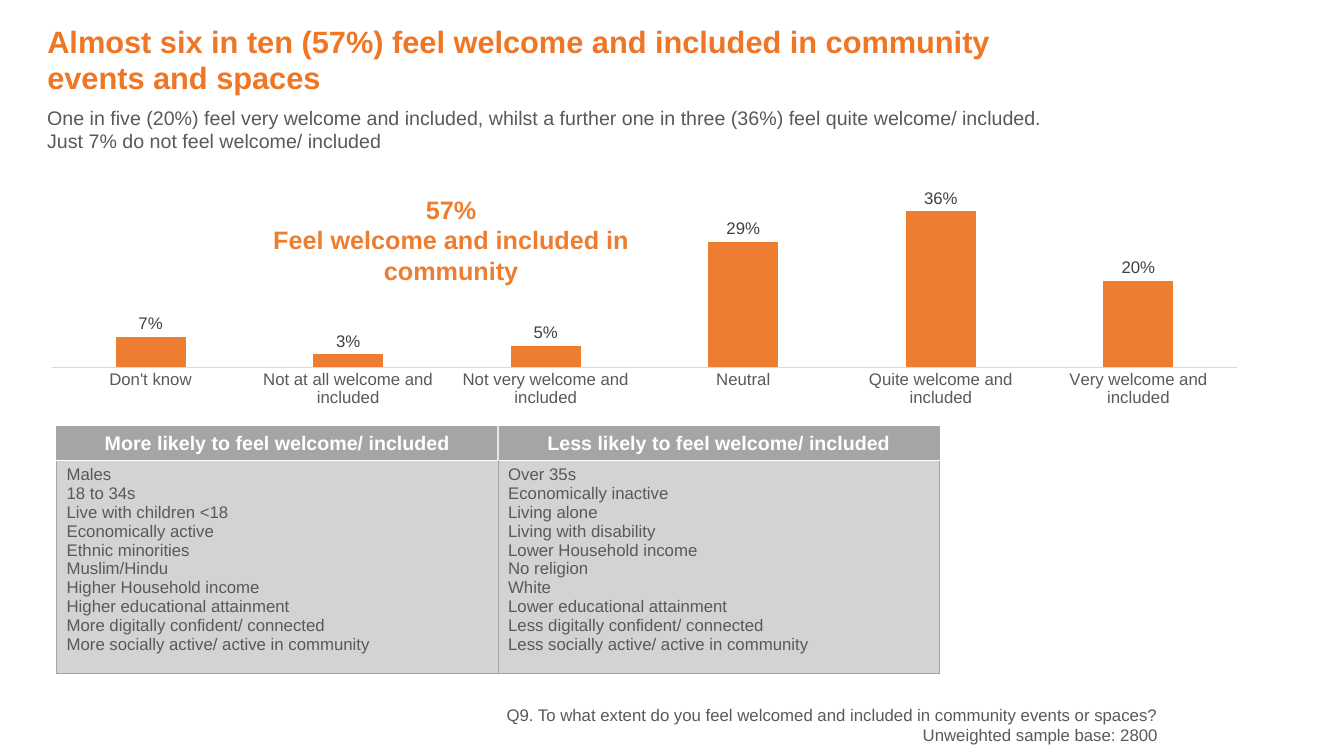
"""Build the slide on feeling welcome in community events and spaces."""
from dataclasses import dataclass

from lxml import etree
from pptx import Presentation
from pptx.chart.data import CategoryChartData
from pptx.dml.color import RGBColor
from pptx.enum.chart import XL_CHART_TYPE, XL_LABEL_POSITION, XL_TICK_MARK
from pptx.enum.text import MSO_ANCHOR, MSO_AUTO_SIZE, PP_ALIGN
from pptx.oxml.ns import qn
from pptx.util import Pt

COLUMN = XL_CHART_TYPE.COLUMN_CLUSTERED
OUTSIDE = XL_LABEL_POSITION.OUTSIDE_END
NO_TICK = XL_TICK_MARK.NONE
TOP, MIDDLE = MSO_ANCHOR.TOP, MSO_ANCHOR.MIDDLE
NO_FIT = MSO_AUTO_SIZE.NONE
LEFT, CENTER, RIGHT = PP_ALIGN.LEFT, PP_ALIGN.CENTER, PP_ALIGN.RIGHT

COLORS = {
    "title": "EE7624", "accent": "ED7D31", "body": "595959", "label": "404040",
    "axis": "D9D9D9", "header": "A5A5A5", "panel": "D3D3D3", "divider": "E7E6E6",
    "white": "FFFFFF",
}
ANSWERS = {
    "Don't know": 0.07,
    "Not at all welcome and included": 0.03,
    "Not very welcome and included": 0.05,
    "Neutral": 0.29,
    "Quite welcome and included": 0.36,
    "Very welcome and included": 0.2,
}


@dataclass(frozen=True)
class Style:
    """Hold the look of a text."""
    size: float
    color: str
    bold: bool = False
    align: PP_ALIGN = LEFT
    anchor: MSO_ANCHOR = TOP


@dataclass(frozen=True)
class Note:
    """Describe a text box in points."""
    left: float
    top: float
    width: float
    height: float
    lines: list[str]
    style: Style
    inset: bool = True


@dataclass(frozen=True)
class Group:
    """Describe one column of the table."""
    heading: str
    members: list[str]


TITLE = Style(22, "title", True)
HEADING = Style(14, "white", True, CENTER, MIDDLE)
MEMBER = Style(12, "body")
NOTES = [
    Note(120.2, 503.3, 707, 28.8, [
        "Q9. To what extent do you feel welcomed and included in community events or spaces?",
        "Unweighted sample base: 2800",
    ], Style(12, "body", False, RIGHT, MIDDLE), False),
    Note(26.6, 72, 730.8, 41, [
        "One in five (20%) feel very welcome and included, whilst a further one in three "
        "(36%) feel quite welcome/ included. Just 7% do not feel welcome/ included",
    ], Style(14, "body")),
    Note(164.2, 135.4, 316, 72.7, ["57%", "Feel welcome and included in community"],
         Style(18, "accent", True, CENTER)),
]
GROUPS = [
    Group("More likely to feel welcome/ included", [
        "Males", "18 to 34s", "Live with children <18", "Economically active",
        "Ethnic minorities", "Muslim/Hindu", "Higher Household income",
        "Higher educational attainment", "More digitally confident/ connected",
        "More socially active/ active in community",
    ]),
    Group("Less likely to feel welcome/ included", [
        "Over 35s", "Economically inactive", "Living alone", "Living with disability",
        "Lower Household income", "No religion", "White", "Lower educational attainment",
        "Less digitally confident/ connected", "Less socially active/ active in community",
    ]),
]


def rgb(name: str) -> RGBColor:
    """Return the named colour."""
    return RGBColor.from_string(COLORS[name])


def assign(target, values: dict) -> None:
    """Set each attribute of the target."""
    for name, value in values.items():
        setattr(target, name, value)


def format_font(font, style: Style) -> None:
    """Apply a style to a font."""
    assign(font, {"name": "Arial", "size": Pt(style.size), "bold": style.bold})
    font.color.rgb = rgb(style.color)


def write(frame, lines: list[str], style: Style) -> None:
    """Write one paragraph per line."""
    frame.text = "\n".join(lines)
    for paragraph in frame.paragraphs:
        paragraph.alignment = style.align
        for run in paragraph.runs:
            format_font(run.font, style)


def add_title(slide) -> None:
    """Place and fill the title."""
    title = slide.shapes.title
    assign(title, {"left": Pt(26.6), "top": Pt(15.8), "width": Pt(690), "height": Pt(60)})
    frame = title.text_frame
    write(frame, ["Almost six in ten (57%) feel welcome and included in community "
                  "events and spaces"], TITLE)
    assign(frame, {"auto_size": NO_FIT, "word_wrap": True, "vertical_anchor": TOP,
                   "margin_top": Pt(2.5)})
    frame.paragraphs[0].line_spacing = 0.96


def add_note(slide, note: Note) -> None:
    """Draw a text box."""
    frame = slide.shapes.add_textbox(
        Pt(note.left), Pt(note.top), Pt(note.width), Pt(note.height)).text_frame
    assign(frame, {"word_wrap": True, "vertical_anchor": note.style.anchor})
    if not note.inset:
        assign(frame, dict.fromkeys(
            ["margin_left", "margin_top", "margin_right", "margin_bottom"], 0))
    write(frame, note.lines, note.style)


def add_answers(slide) -> None:
    """Draw the column chart of answers."""
    answers = CategoryChartData(number_format="0%")
    answers.categories = list(ANSWERS)
    answers.add_series("Series 1", list(ANSWERS.values()))
    chart = slide.shapes.add_chart(
        COLUMN, Pt(19.4), Pt(135.4), Pt(882), Pt(158.4), answers).chart
    assign(chart, {"has_legend": False, "has_title": False})
    format_font(chart.font, MEMBER)
    assign(chart.value_axis, {"visible": False, "has_major_gridlines": False,
                              "minimum_scale": 0, "maximum_scale": 0.4})
    axis = chart.category_axis
    assign(axis, {"major_tick_mark": NO_TICK, "minor_tick_mark": NO_TICK})
    format_font(axis.tick_labels.font, MEMBER)
    axis.format.line.color.rgb = rgb("axis")
    axis.format.line.width = Pt(0.75)
    plot = chart.plots[0]
    assign(plot, {"gap_width": 182, "vary_by_categories": False, "has_data_labels": True})
    assign(plot.data_labels, {"show_value": True, "number_format": "0%",
                              "number_format_is_linked": False, "position": OUTSIDE})
    format_font(plot.data_labels.font, Style(12, "label"))
    bars = plot.series[0].format.fill
    bars.solid()
    bars.fore_color.rgb = rgb("accent")


def add_border(cell, side: str, color: str, width: float) -> None:
    """Append one border line to a cell."""
    line = etree.SubElement(cell._tc.get_or_add_tcPr(), qn(f"a:ln{side}"), w=str(Pt(width)))
    fill = etree.SubElement(line, qn("a:solidFill"))
    etree.SubElement(fill, qn("a:srgbClr"), val=COLORS[color])


def fill_cell(cell, lines: list[str], style: Style, fill: str, borders: dict) -> None:
    """Write and colour one table cell."""
    write(cell.text_frame, lines, style)
    cell.vertical_anchor = style.anchor
    for side in "LRTB":
        add_border(cell, side, *borders.get(side, ("header", 0.5)))
    cell.fill.solid()
    cell.fill.fore_color.rgb = rgb(fill)


def add_groups(slide) -> None:
    """Draw the table of groups."""
    table = slide.shapes.add_table(
        2, len(GROUPS), Pt(40.4), Pt(304.6), Pt(630.8), Pt(176)).table
    for row, height in zip(table.rows, (24.4, 151.6)):
        row.height = Pt(height)
    rule = ("white", 1)
    for column, (group, inner) in enumerate(zip(GROUPS, "RL")):
        fill_cell(table.cell(0, column), [group.heading], HEADING, "header",
                  {inner: ("divider", 1), "B": rule})
        fill_cell(table.cell(1, column), group.members, MEMBER, "panel", {"T": rule})


def main() -> None:
    """Build and save the slide."""
    deck = Presentation()
    assign(deck, {"slide_width": Pt(960), "slide_height": Pt(540)})
    slide = deck.slides.add_slide(deck.slide_layouts[5])
    add_title(slide)
    add_answers(slide)
    add_groups(slide)
    for note in NOTES:
        add_note(slide, note)
    deck.save("out.pptx")


if __name__ == "__main__":
    main()
